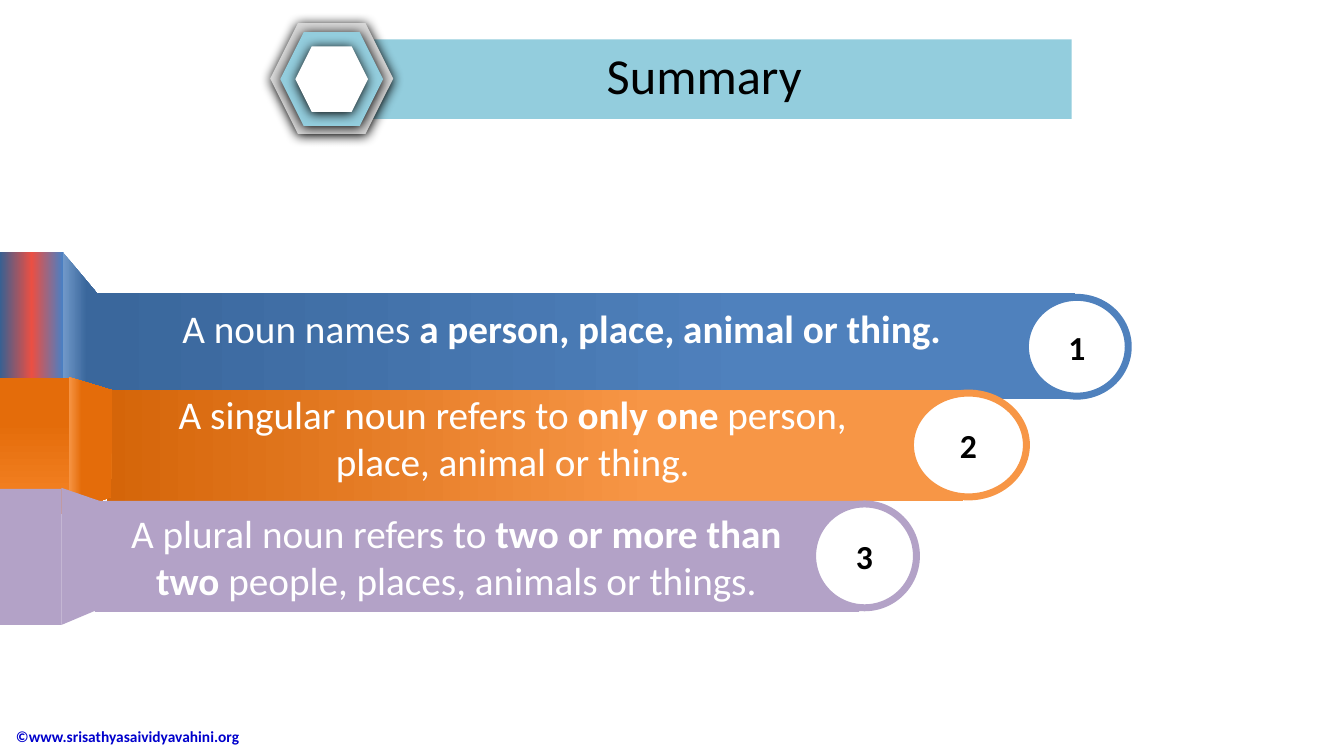
from dataclasses import dataclass

from lxml import etree
from pptx import Presentation
from pptx.dml.color import RGBColor
from pptx.enum.shapes import MSO_SHAPE
from pptx.enum.text import MSO_ANCHOR, MSO_AUTO_SIZE, PP_ALIGN
from pptx.oxml.ns import qn
from pptx.util import Pt

RECTANGLE, HEXAGON, OVAL = MSO_SHAPE.RECTANGLE, MSO_SHAPE.HEXAGON, MSO_SHAPE.OVAL
CENTER, LEFT = PP_ALIGN.CENTER, PP_ALIGN.LEFT
TOP, MIDDLE = MSO_ANCHOR.TOP, MSO_ANCHOR.MIDDLE
FIT, FIXED = MSO_AUTO_SIZE.SHAPE_TO_FIT_TEXT, MSO_AUTO_SIZE.NONE
PX = 9144
FONT = "Calibri"
COLORS = {
    "white": "FFFFFF", "black": "000000", "link": "0000CC",
    "aqua": "93CDDD", "silver": "D9D9D9",
    "blue": "4F81BD", "blue_deep": "3A679C", "blue_pale": "729ACA",
    "blue_edge": "376092", "blue_bright": "4780C5", "red": "EB4F43",
    "orange": "F79646", "orange_deep": "D56509", "orange_fold": "E46C0A",
    "orange_bright": "F68528", "purple": "B3A2C7",
}

Box = tuple[int, int, int, int]
Spans = list[tuple[str, bool]]


@dataclass(frozen=True)
class Paint:
    stops: list[tuple[int, str]]
    angle: int = 0


@dataclass(frozen=True)
class Ribbon:
    number: str
    accent: str
    tail: Box
    tail_paint: Paint
    fold: list[tuple[int, int]]
    fold_paint: Paint
    band: Box
    band_paint: Paint
    badge: Box
    message_box: Box
    message: Spans


@dataclass(frozen=True)
class Hexagon:
    box: Box
    color: str


def solid(color: str) -> Paint:
    return Paint([(0, color)])


HEXAGONS = [
    Hexagon((268, 23, 122, 110), "silver"),
    Hexagon((278, 32, 102, 93), "aqua"),
    Hexagon((293, 46, 72, 65), "white"),
]
RIBBONS = [
    Ribbon(
        "1", "blue", (0, 250, 63, 134),
        Paint([(0, "blue_edge"), (50, "red"), (100, "blue_bright")]),
        [(97, 292), (97, 396), (62, 384), (62, 250)],
        Paint([(0, "blue_pale"), (68, "blue_deep")]),
        (97, 291, 969, 105), Paint([(0, "blue_deep"), (68, "blue")]),
        (1017, 295, 102, 98), (114, 297, 886, 57),
        [("A noun names ", False), ("a person, place, animal or thing.", True)],
    ),
    Ribbon(
        "2", "orange", (0, 375, 69, 135),
        Paint([(0, "orange_bright"), (68, "orange_fold")], 90),
        [(111, 387), (110, 493), (68, 509), (68, 374)],
        Paint([(0, "orange"), (30, "orange_fold"), (100, "orange_fold")]),
        (106, 387, 849, 110), Paint([(0, "orange_deep"), (64, "orange")]),
        (903, 390, 115, 103), (128, 382, 761, 104),
        [("A singular noun refers to ", False), ("only one ", True),
         ("person, place, animal or thing.", False)],
    ),
    Ribbon(
        "3", "purple", (0, 485, 61, 135), solid("purple"),
        [(99, 497), (99, 604), (61, 620), (61, 484)], solid("purple"),
        (94, 497, 758, 110), solid("purple"),
        (806, 500, 103, 103), (89, 500, 727, 104),
        [("A plural noun refers to ", False), ("two or more than two", True),
         (" people, places, animals or things.", False)],
    ),
]


def rgb(color: str) -> RGBColor:
    return RGBColor.from_string(COLORS[color])


def emu(box: Box) -> list[int]:
    return [length * PX for length in box]


def apply(target, values: dict) -> None:
    for name, value in values.items():
        setattr(target, name, value)


def paint_shape(shape, paint: Paint) -> None:
    shape.shadow.inherit = False
    shape.line.fill.background()
    if len(paint.stops) == 1:
        shape.fill.solid()
        shape.fill.fore_color.rgb = rgb(paint.stops[0][1])
        return
    shape.fill.gradient()
    shape.fill.gradient_angle = paint.angle
    stop_list = shape._element.spPr.find(".//" + qn("a:gsLst"))
    for old_stop in list(stop_list):
        stop_list.remove(old_stop)
    for position, color in paint.stops:
        stop = etree.SubElement(stop_list, qn("a:gs"), pos=str(position * 1000))
        etree.SubElement(stop, qn("a:srgbClr"), val=COLORS[color])


def add_part(slide, kind, box: Box, paint: Paint):
    shape = slide.shapes.add_shape(kind, *emu(box))
    paint_shape(shape, paint)
    return shape


def add_glow(shape) -> None:
    effects = shape._element.spPr.find(qn("a:effectLst"))
    shadow = etree.SubElement(effects, qn("a:outerShdw"), blurRad=str(Pt(8.5)),
                              dist=str(Pt(1)), dir="5400000", rotWithShape="0")
    etree.SubElement(shadow, qn("a:srgbClr"), val=COLORS["black"])


def write(shape, spans: Spans, size: int, color: str, align=CENTER,
          anchor=TOP, wrap: bool = True, fit=FIXED) -> None:
    frame = shape.text_frame
    apply(frame, {"word_wrap": wrap, "vertical_anchor": anchor, "auto_size": fit})
    paragraph = frame.paragraphs[0]
    paragraph.alignment = align
    for text, bold in spans:
        run = paragraph.add_run()
        run.text = text
        apply(run.font, {"name": FONT, "size": Pt(size), "bold": bold})
        run.font.color.rgb = rgb(color)


def add_heading(slide) -> None:
    add_part(slide, RECTANGLE, (333, 39, 730, 79), solid("aqua"))
    for hexagon in HEXAGONS:
        add_glow(add_part(slide, HEXAGON, hexagon.box, solid(hexagon.color)))
    title = slide.shapes.title
    apply(title, dict(zip(("left", "top", "width", "height"), emu((591, 39, 215, 71)))))
    write(title, [("Summary", False)], 36, "black", wrap=False, fit=FIT)
    slide.shapes._spTree.append(title._element)


def add_ribbon(slide, ribbon: Ribbon) -> None:
    add_part(slide, RECTANGLE, ribbon.band, ribbon.band_paint)
    add_part(slide, RECTANGLE, ribbon.tail, ribbon.tail_paint)
    outline = slide.shapes.build_freeform(*ribbon.fold[0], scale=PX)
    outline.add_line_segments(ribbon.fold[1:], close=True)
    paint_shape(outline.convert_to_shape(), ribbon.fold_paint)
    badge = add_part(slide, OVAL, ribbon.badge, solid("white"))
    badge.line.color.rgb = rgb(ribbon.accent)
    badge.line.width = Pt(5)
    write(badge, [(ribbon.number, True)], 24, "black", anchor=MIDDLE)
    message = slide.shapes.add_textbox(*emu(ribbon.message_box))
    apply(message.text_frame, {"margin_left": 9 * PX, "margin_right": 9 * PX})
    write(message, ribbon.message, 28, "white", fit=FIT)


def main() -> None:
    deck = Presentation()
    apply(deck, {"slide_width": 1333 * PX, "slide_height": 750 * PX})
    slide = deck.slides.add_slide(deck.slide_layouts[5])
    copyright_line = slide.shapes.add_textbox(*emu((6, 710, 353, 41)))
    write(copyright_line, [("©www.srisathyasaividyavahini.org", True)], 11, "link",
          align=LEFT, anchor=MIDDLE)
    add_heading(slide)
    for ribbon in RIBBONS:
        add_ribbon(slide, ribbon)
    deck.save("out.pptx")


if __name__ == "__main__":
    main()
